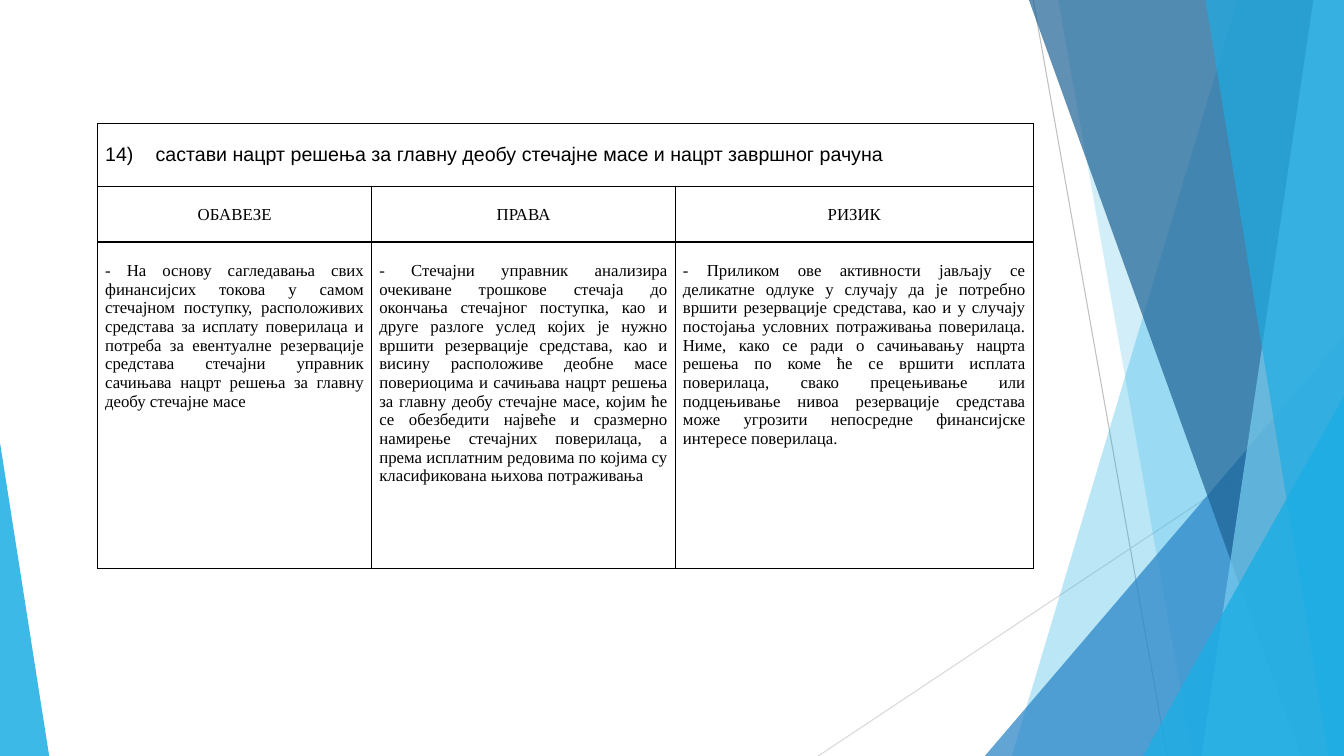
import lxml.etree
import pptx
import pptx.dml.color
import pptx.enum.shapes
import pptx.enum.text
import pptx.oxml.ns
import pptx.util

Cm = pptx.util.Cm
ALIGN = pptx.enum.text.PP_ALIGN
WIDTH, HEIGHT = 33.87, 19.05
BLUE = "1CADE4"

RAYS = [((26.04, 0), (29.41, HEIGHT), "BFBFBF"),
        ((WIDTH, 10.24), (20.62, HEIGHT), "D9D9D9")]

# Facets: top x, bottom x, colour, opacity; each reaches the right edge.
# Wedges: left, width, height, apex, colour, opacity; each stands on the bottom edge.
DECOR = [
    ("facet", 31.19, 25.5, BLUE, 30),
    ("facet", 26.67, 30.05, BLUE, 20),
    ("wedge", 24.82, 9.05, 10.59, 1, "2683C6", 72),
    ("facet", 25.93, 32.79, "1D6294", 70),
    ("facet", 33.1, 30.28, "77CEEF", 70),
    ("facet", 30.38, 33.48, BLUE, 65),
    ("wedge", 28.81, 5.06, 9.07, 1, BLUE, 80),
    ("wedge", 0, 1.24, 7.9, 0, BLUE, 85),
]

TITLE = "14)\tсастави нацрт решења за главну деобу стечајне масе и нацрт завршног рачуна"
HEADINGS = ["ОБАВЕЗЕ", "ПРАВА", "РИЗИК"]
DETAILS = [
    "- На основу сагледавања свих финансијсих токова у самом стечајном поступку, "
    "расположивих средстава за исплату поверилаца и потреба за евентуалне резервације "
    "средстава стечајни управник сачињава нацрт решења за главну деобу стечајне масе",
    "- Стечајни управник анализира очекиване трошкове стечаја до окончања стечајног "
    "поступка, као и друге разлоге услед којих је нужно вршити резервације средстава, "
    "као и висину расположиве деобне масе повериоцима и сачињава нацрт решења за главну "
    "деобу стечајне масе, којим ће се обезбедити највеће и сразмерно намирење стечајних "
    "поверилаца, а према исплатним редовима по којима су класификована њихова потраживања",
    "- Приликом ове активности јављају се деликатне одлуке у случају да је потребно "
    "вршити резервације средстава, као и у случају постојања условних потраживања "
    "поверилаца. Ниме, како се ради о сачињавању нацрта решења по коме ће се вршити "
    "исплата поверилаца, свако прецењивање или подцењивање нивоа резервације средстава "
    "може угрозити непосредне финансијске интересе поверилаца.",
]
COLUMNS = [6.91, 7.65, 9.02]
ROWS = [1.57, 1.41, 8.23]
BODY_FONT = {"name": "Times New Roman", "size": pptx.util.Pt(12)}
TITLE_FONT = {"name": "Arial", "size": pptx.util.Pt(14)}


def rgb(value):
    return pptx.dml.color.RGBColor.from_string(value)


def sub(parent, tag, **attrs):
    return lxml.etree.SubElement(parent, pptx.oxml.ns.qn(tag), attrs)


def paint(sp, color, opacity):
    sp.shadow.inherit = False
    sp.line.fill.background()
    sp.fill.solid()
    sp.fill.fore_color.rgb = rgb(color)
    clr = sp.fill._xPr.find(".//" + pptx.oxml.ns.qn("a:srgbClr"))
    sub(clr, "a:alpha", val=str(opacity * 1000))


def add_ray(shapes, start, end, color):
    ray = shapes.add_connector(pptx.enum.shapes.MSO_CONNECTOR.STRAIGHT,
                               *[Cm(v) for v in start + end])
    ray.line.color.rgb = rgb(color)
    ray.line.width = pptx.util.Pt(0.75)
    sub(ray._element.spPr, "a:effectLst")


def add_facet(shapes, top_x, bottom_x, color, opacity):
    fb = shapes.build_freeform(Cm(top_x), 0)
    corners = [(WIDTH, 0), (WIDTH, HEIGHT), (bottom_x, HEIGHT)]
    fb.add_line_segments([(Cm(x), Cm(y)) for x, y in corners], close=True)
    paint(fb.convert_to_shape(), color, opacity)


def add_wedge(shapes, left, width, height, apex, color, opacity):
    sp = shapes.add_shape(pptx.enum.shapes.MSO_SHAPE.ISOSCELES_TRIANGLE,
                          Cm(left), Cm(HEIGHT - height), Cm(width), Cm(height))
    sp.adjustments[0] = apex
    paint(sp, color, opacity)


def add_borders(cell):
    tc_pr = cell._tc.get_or_add_tcPr()
    for i, side in enumerate("LRTB"):
        ln = sub(tc_pr, "a:ln" + side, w="12700")
        sub(sub(ln, "a:solidFill"), "a:srgbClr", val="000000")
        tc_pr.insert(i, ln)


def write_cell(cell, text, font, align):
    p = cell.text_frame.paragraphs[0]
    p.alignment = align
    r = p.add_run()
    r.text = text
    r.font.color.rgb = rgb("000000")
    for name, value in font.items():
        setattr(r.font, name, value)
    return p


def format_cell(cell):
    margins = {"margin_left": 0.19, "margin_right": 0.19,
               "margin_top": 0.49, "margin_bottom": 0}
    for name, value in margins.items():
        setattr(cell, name, Cm(value))
    cell.fill.background()
    add_borders(cell)


def add_duties_table(shapes):
    table = shapes.add_table(len(ROWS), len(COLUMNS), Cm(2.46), Cm(3.12),
                             Cm(sum(COLUMNS)), Cm(sum(ROWS))).table
    table.first_row = table.horz_banding = False
    for column, width in zip(table.columns, COLUMNS):
        column.width = Cm(width)
    for row, height in zip(table.rows, ROWS):
        row.height = Cm(height)
    for cell in table.iter_cells():
        format_cell(cell)
    table.cell(0, 0).merge(table.cell(0, len(COLUMNS) - 1))
    p = write_cell(table.cell(0, 0), TITLE, TITLE_FONT, ALIGN.LEFT)
    tabs = sub(p._p.get_or_add_pPr(), "a:tabLst")
    sub(tabs, "a:tab", pos=str(Cm(1.27)), algn="l")
    for i, (heading, detail) in enumerate(zip(HEADINGS, DETAILS)):
        write_cell(table.cell(1, i), heading, BODY_FONT, ALIGN.CENTER)
        write_cell(table.cell(2, i), detail, BODY_FONT, ALIGN.JUSTIFY)


def main():
    prs = pptx.Presentation()
    prs.slide_width, prs.slide_height = Cm(WIDTH), Cm(HEIGHT)
    s = prs.slides.add_slide(prs.slide_layouts[6])
    decor = s.shapes.add_group_shape().shapes
    for ray in RAYS:
        add_ray(decor, *ray)
    draw = {"facet": add_facet, "wedge": add_wedge}
    for kind, *values in DECOR:
        draw[kind](decor, *values)
    add_duties_table(s.shapes)
    prs.save("out.pptx")


if __name__ == "__main__":
    main()
